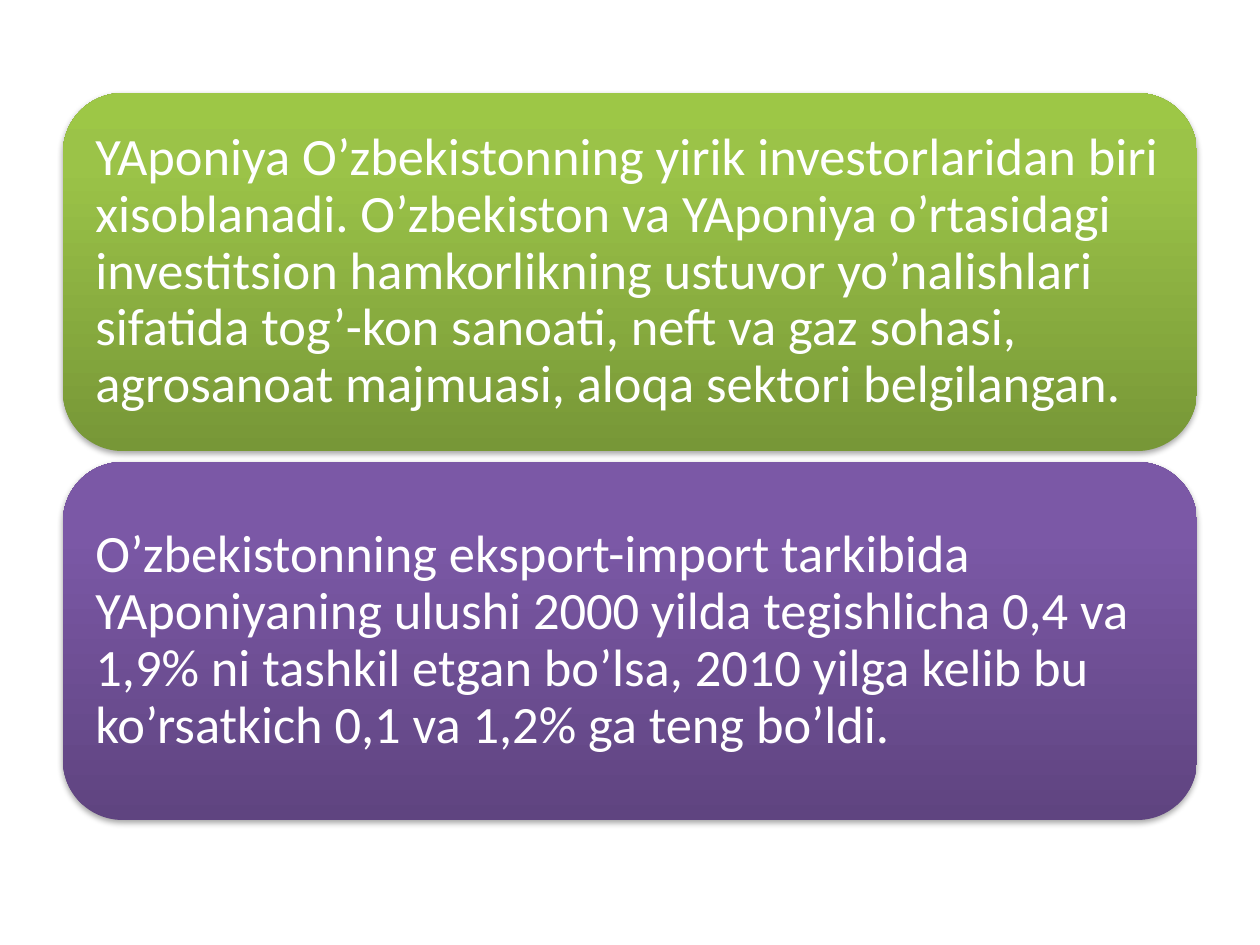
from pptx import Presentation
from pptx.dml.color import RGBColor
from pptx.enum.shapes import MSO_SHAPE
from pptx.enum.text import MSO_ANCHOR, PP_ALIGN
from pptx.oxml import parse_xml
from pptx.oxml.ns import nsdecls, qn
from pptx.util import Pt

# Content: statement and the name of its gradient
STATEMENTS = [
    ("YAponiya O’zbekistonning yirik investorlaridan biri xisoblanadi. "
     "O’zbekiston va YAponiya o’rtasidagi investitsion hamkorlikning ustuvor "
     "yo’nalishlari sifatida tog’-kon sanoati, neft va gaz sohasi, "
     "agrosanoat majmuasi, aloqa sektori belgilangan.", "green"),
    ("O’zbekistonning eksport-import tarkibida YAponiyaning ulushi 2000 yilda "
     "tegishlicha 0,4 va 1,9% ni tashkil etgan bo’lsa, 2010 yilga kelib bu "
     "ko’rsatkich 0,1 va 1,2% ga teng bo’ldi.", "purple"),
]

THEME = {
    "green": [(0, "779737"), (80, "9BC348"), (100, "9DC746")],
    "purple": [(0, "5F4480"), (80, "7B58A6"), (100, "7C57A8")],
    "font": {"name": "Calibri", "size": Pt(30)},
    "text": RGBColor.from_string("FFFFFF"),
    "shadow": {"color": "000000", "alpha": 35, "blur": Pt(3.1), "distance": Pt(1.8)},
}

# Layout in px
SLIDE_WIDTH, SLIDE_HEIGHT = 1260, 945
LEFT, TOP, WIDTH, HEIGHT, GAP = 63, 93, 1134, 358, 11
INSET = 15


def px(length):
    return round(length * 914400 / 126)


def set_gradient(shape, stops):
    """Fill from the bottom edge upwards."""
    shape.fill.gradient()
    shape.fill.gradient_angle = 90
    stop_list = shape.fill._fill._gradFill.find(qn("a:gsLst"))
    for stop in list(stop_list):
        stop_list.remove(stop)
    for position, color in stops:
        stop_list.append(parse_xml(
            f'<a:gs {nsdecls("a")} pos="{position * 1000}">'
            f'<a:srgbClr val="{color}"/></a:gs>'))


def set_shadow(shape, color, alpha, blur, distance):
    shape.shadow.inherit = False
    effects = shape._element.spPr.find(qn("a:effectLst"))
    effects.append(parse_xml(
        f'<a:outerShdw {nsdecls("a")} blurRad="{blur}" dist="{distance}" '
        f'dir="5400000" rotWithShape="0"><a:srgbClr val="{color}">'
        f'<a:alpha val="{alpha * 1000}"/></a:srgbClr></a:outerShdw>'))


def add_panel(slide, top, text, gradient):
    shape = slide.shapes.add_shape(
        MSO_SHAPE.ROUNDED_RECTANGLE, px(LEFT), px(top), px(WIDTH), px(HEIGHT))
    set_gradient(shape, THEME[gradient])
    shape.line.fill.background()
    set_shadow(shape, **THEME["shadow"])

    frame = shape.text_frame
    frame_format = {"word_wrap": True, "vertical_anchor": MSO_ANCHOR.MIDDLE}
    for side in ("left", "top", "right", "bottom"):
        frame_format[f"margin_{side}"] = px(INSET)
    for name, value in frame_format.items():
        setattr(frame, name, value)

    paragraph = frame.paragraphs[0]
    paragraph.alignment = PP_ALIGN.LEFT
    paragraph.line_spacing = 0.9
    run = paragraph.add_run()
    run.text = text
    for name, value in THEME["font"].items():
        setattr(run.font, name, value)
    run.font.color.rgb = THEME["text"]


def main():
    presentation = Presentation()
    presentation.slide_width = px(SLIDE_WIDTH)
    presentation.slide_height = px(SLIDE_HEIGHT)
    slide = presentation.slides.add_slide(presentation.slide_layouts[6])

    # Stacked panels
    for index, (text, gradient) in enumerate(STATEMENTS):
        add_panel(slide, TOP + index * (HEIGHT + GAP), text, gradient)

    presentation.save("out.pptx")


if __name__ == "__main__":
    main()
